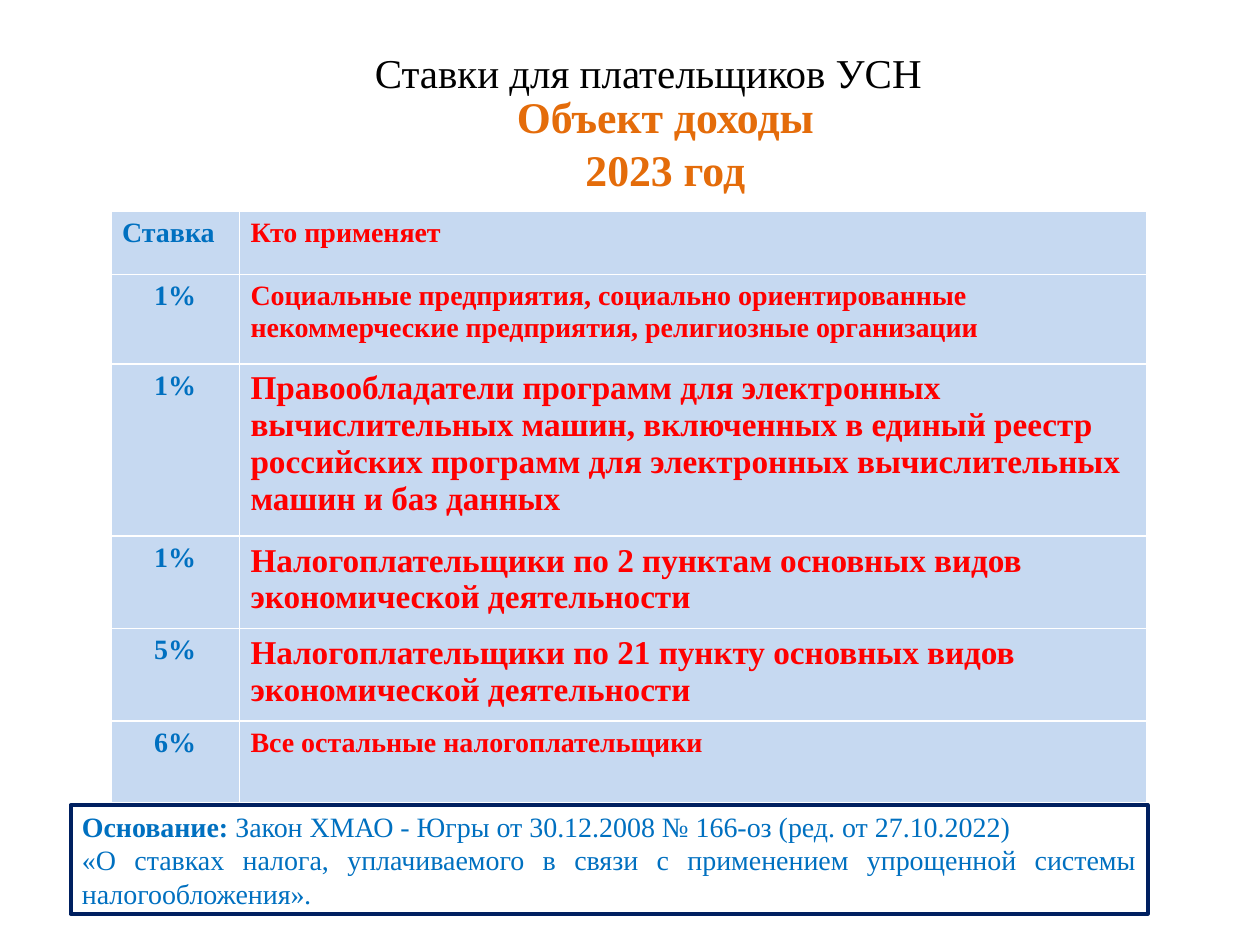
from dataclasses import dataclass

from pptx import Presentation
from pptx.dml import color as dml
from pptx.enum import shapes, text
from pptx.util import Emu, Inches, Pt

WIDE, HIGH = 10, 7.5
FONT = "Times New Roman"
BLACK, ORANGE, BLUE, RED = "000000", "E46C0A", "0070C0", "FF0000"
NAVY, PALE = "002060", "C6D9F1"
LEFT, MID, JUST = text.PP_ALIGN.LEFT, text.PP_ALIGN.CENTER, text.PP_ALIGN.JUSTIFY


@dataclass
class Box:
    x: float
    y: float
    w: float
    h: float

    def place(self) -> tuple[Emu, Emu, Emu, Emu]:
        return (Inches(self.x * WIDE), Inches(self.y * HIGH),
                Inches(self.w * WIDE), Inches(self.h * HIGH))


@dataclass
class Rate:
    rate: str
    payer: str
    high: float
    size: float = 16
    align: text.PP_ALIGN = MID


TITLE = Box(0.068, 0.043, 0.893, 0.067)
HEAD = Box(0.072, 0.09, 0.912, 0.11)
GRID = Box(0.088, 0.224, 0.822, 0.623)
BASIS = Box(0.056, 0.852, 0.855, 0.115)
COLS = (0.124, 0.876)

RATES = [
    Rate("Ставка", "Кто применяет", 0.107, align=LEFT),
    Rate("1%", "Социальные предприятия, социально ориентированные "
         "некоммерческие предприятия, религиозные организации", 0.152),
    Rate("1%", "Правообладатели программ для электронных вычислительных машин, "
         "включенных в единый реестр российских программ для электронных "
         "вычислительных машин и баз данных", 0.291, 19),
    Rate("1%", "Налогоплательщики по 2 пунктам основных видов "
         "экономической деятельности", 0.156, 19),
    Rate("5%", "Налогоплательщики по 21 пункту основных видов "
         "экономической деятельности", 0.156, 19),
    Rate("6%", "Все остальные налогоплательщики", 0.138),
]


def tint(code: str) -> dml.RGBColor:
    return dml.RGBColor.from_string(code)


def write(para, words: str, *, size: float = 16, color: str = BLUE,
          bold: bool = True, italic: bool = False, align=LEFT) -> None:
    para.alignment = align
    run = para.add_run()
    run.text = words
    font = run.font
    font.name, font.size = FONT, Pt(size)
    font.bold, font.italic = bold, italic
    font.color.rgb = tint(color)


def inset(area, side: float, edge: float) -> None:
    area.margin_left = area.margin_right = Inches(side)
    area.margin_top = area.margin_bottom = Inches(edge)


def frame(shape, anchor=text.MSO_ANCHOR.MIDDLE):
    area = shape.text_frame
    area.word_wrap = True
    area.vertical_anchor = anchor
    inset(area, 0.09, 0.04)
    return area


def draw_heads(slide) -> None:
    area = frame(slide.shapes.add_textbox(*TITLE.place()))
    write(area.paragraphs[0], "Ставки для плательщиков УСН",
          size=23.4, color=BLACK, bold=False, align=MID)
    area = frame(slide.shapes.add_textbox(*HEAD.place()), text.MSO_ANCHOR.TOP)
    for para, words in ((area.paragraphs[0], "Объект доходы"),
                        (area.add_paragraph(), "2023 год")):
        write(para, words, size=25, color=ORANGE, align=MID)


def draw_rates(slide) -> None:
    table = slide.shapes.add_table(len(RATES), len(COLS), *GRID.place()).table
    for col, share in zip(table.columns, COLS):
        col.width = Inches(GRID.w * WIDE * share)
    for row, rate in zip(table.rows, RATES):
        row.height = Inches(GRID.h * HIGH * rate.high)
        for cell in row.cells:
            cell.fill.solid()
            cell.fill.fore_color.rgb = tint(PALE)
            inset(cell, 0.09, 0.05)
        first, last = (cell.text_frame.paragraphs[0] for cell in row.cells)
        write(first, rate.rate, align=rate.align)
        write(last, rate.payer, size=rate.size, color=RED)


def draw_basis(slide) -> None:
    shape = slide.shapes.add_shape(shapes.MSO_SHAPE.RECTANGLE, *BASIS.place())
    shape.shadow.inherit = False
    shape.fill.background()
    shape.line.color.rgb = tint(NAVY)
    shape.line.width = Pt(2.25)
    area = frame(shape)
    law, name = area.paragraphs[0], area.add_paragraph()
    write(law, "Основание: ", align=JUST)
    write(law, "Закон ХМАО - Югры от 30.12.2008 № 166-оз (ред. от 27.10.2022)",
          bold=False, align=JUST)
    write(name, "«О ставках налога, уплачиваемого в связи с применением "
          "упрощенной системы налогообложения»", bold=False, align=JUST)
    write(name, ".", bold=False, italic=True, align=JUST)


def main() -> None:
    deck = Presentation()
    deck.slide_width, deck.slide_height = Inches(WIDE), Inches(HIGH)
    slide = deck.slides.add_slide(deck.slide_layouts[6])
    draw_heads(slide)
    draw_basis(slide)
    draw_rates(slide)
    deck.save("out.pptx")


if __name__ == "__main__":
    main()
